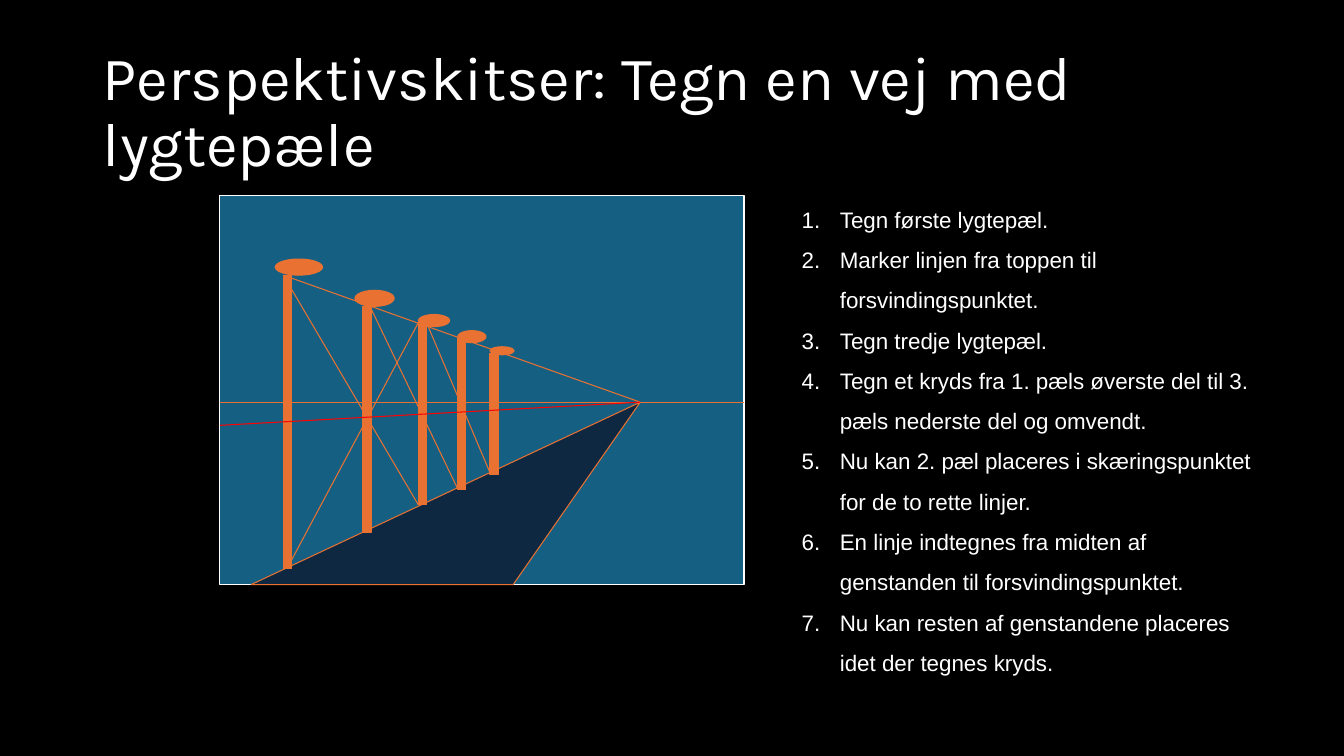
from lxml.etree import SubElement
from pptx import Presentation
from pptx.dml.color import RGBColor
from pptx.enum.shapes import MSO_CONNECTOR, MSO_SHAPE
from pptx.enum.text import MSO_ANCHOR, MSO_AUTO_SIZE, PP_ALIGN
from pptx.oxml.ns import qn
from pptx.util import Inches, Pt

ORANGE = "E97132"
WHITE = "FFFFFF"
POLE_WIDTH = 0.08
VANISHING_POINT = (6.35, 3.99)


def paint(target, color):
    """Fill a fill, line fill or background with one solid hex colour."""
    target.fill.solid()
    target.fill.fore_color.rgb = RGBColor.from_string(color)


def style_shape(shape, fill, line):
    shape.shadow.inherit = False
    paint(shape, fill)
    paint(shape.line, line)
    shape.line.width = Pt(0.75)


presentation = Presentation()
presentation.slide_width = Inches(13.33)
presentation.slide_height = Inches(7.5)
slide = presentation.slides.add_slide(presentation.slide_layouts[1])
paint(slide.background, "000000")

# Title and numbered steps
title = slide.shapes.title
steps = slide.placeholders[1]
title.text_frame.text = "Perspektivskitser: Tegn en vej med lygtepæle"
steps.text_frame.text = "\n".join([
    "Tegn første lygtepæl.",
    "Marker linjen fra toppen til forsvindingspunktet.",
    "Tegn tredje lygtepæl.",
    "Tegn et kryds fra 1. pæls øverste del til 3. pæls nederste del og omvendt.",
    "Nu kan 2. pæl placeres i skæringspunktet for de to rette linjer.",
    "En linje indtegnes fra midten af genstanden til forsvindingspunktet.",
    "Nu kan resten af genstandene placeres idet der tegnes kryds.",
])

text_formats = [
    (title, (0.92, 0.4, 11.5, 1.45), MSO_ANCHOR.MIDDLE, 0.9, "Karla", 44),
    (steps, (7.85, 1.86, 4.81, 4.9), MSO_ANCHOR.TOP, 1.5, "Arial", 16),
]
for placeholder, box, anchor, spacing, font_name, size in text_formats:
    placeholder.left, placeholder.top, placeholder.width, placeholder.height = map(Inches, box)
    frame = placeholder.text_frame
    frame.word_wrap = True
    frame.auto_size = MSO_AUTO_SIZE.NONE
    frame.vertical_anchor = anchor
    paragraph_format = {"alignment": PP_ALIGN.LEFT, "line_spacing": spacing,
                        "space_before": Pt(0), "space_after": Pt(0)}
    for paragraph in frame.paragraphs:
        for name, value in paragraph_format.items():
            setattr(paragraph, name, value)
        font = paragraph.runs[0].font
        for name, value in {"name": font_name, "size": Pt(size)}.items():
            setattr(font, name, value)
        font.color.rgb = RGBColor.from_string(WHITE)

for paragraph in steps.text_frame.paragraphs:
    properties = paragraph._p.get_or_add_pPr()
    properties.set("marL", str(Inches(0.38)))
    properties.set("indent", str(-Inches(0.38)))
    SubElement(properties, qn("a:buFont"), typeface="+mj-lt")
    SubElement(properties, qn("a:buAutoNum"), type="arabicPeriod")

# Sky and road
sky = slide.shapes.add_shape(MSO_SHAPE.RECTANGLE, *map(Inches, (2.18, 1.94, 5.2, 3.86)))
style_shape(sky, "156082", WHITE)

road_builder = slide.shapes.build_freeform(Inches(2.49), Inches(5.8))
road_builder.add_line_segments(
    [tuple(map(Inches, point)) for point in (VANISHING_POINT, (5.09, 5.8))], close=True)
style_shape(road_builder.convert_to_shape(), "0E2841", ORANGE)

# Lamp posts: pole left, top, height, then lamp left, top, width, height
lamp_posts = [
    (2.81, 2.73, 2.91, 2.73, 2.57, 0.47, 0.16),
    (3.6, 3.04, 2.24, 3.52, 2.88, 0.39, 0.16),
    (4.15, 3.2, 1.81, 4.15, 3.12, 0.31, 0.12),
    (4.54, 3.36, 1.5, 4.54, 3.28, 0.28, 0.12),
    (4.86, 3.51, 1.2, 4.86, 3.44, 0.24, 0.08),
]
for left, top, height, *lamp_box in lamp_posts:
    pole_box = (left, top, POLE_WIDTH, height)
    for preset, box in ((MSO_SHAPE.RECTANGLE, pole_box), (MSO_SHAPE.OVAL, lamp_box)):
        style_shape(slide.shapes.add_shape(preset, *map(Inches, box)), ORANGE, ORANGE)

# Horizon, line along the tops, crosses between poles, line through the middles
construction_lines = [
    ((2.18, 3.99), (7.38, 3.99), ORANGE),
    ((2.81, 2.73), VANISHING_POINT, ORANGE),
    ((2.81, 2.73), (4.15, 5.01), ORANGE),
    ((2.89, 5.56), (4.15, 3.2), ORANGE),
    ((3.67, 3.04), (4.54, 4.85), ORANGE),
    ((4.23, 3.2), (4.86, 4.69), ORANGE),
    (VANISHING_POINT, (2.18, 4.22), "FF0000"),
]
for start, end, color in construction_lines:
    connector = slide.shapes.add_connector(MSO_CONNECTOR.STRAIGHT, *map(Inches, start + end))
    paint(connector.line, color)
    connector.line.width = Pt(0.75)
    SubElement(connector._element.spPr, qn("a:effectLst"))

presentation.save("out.pptx")
